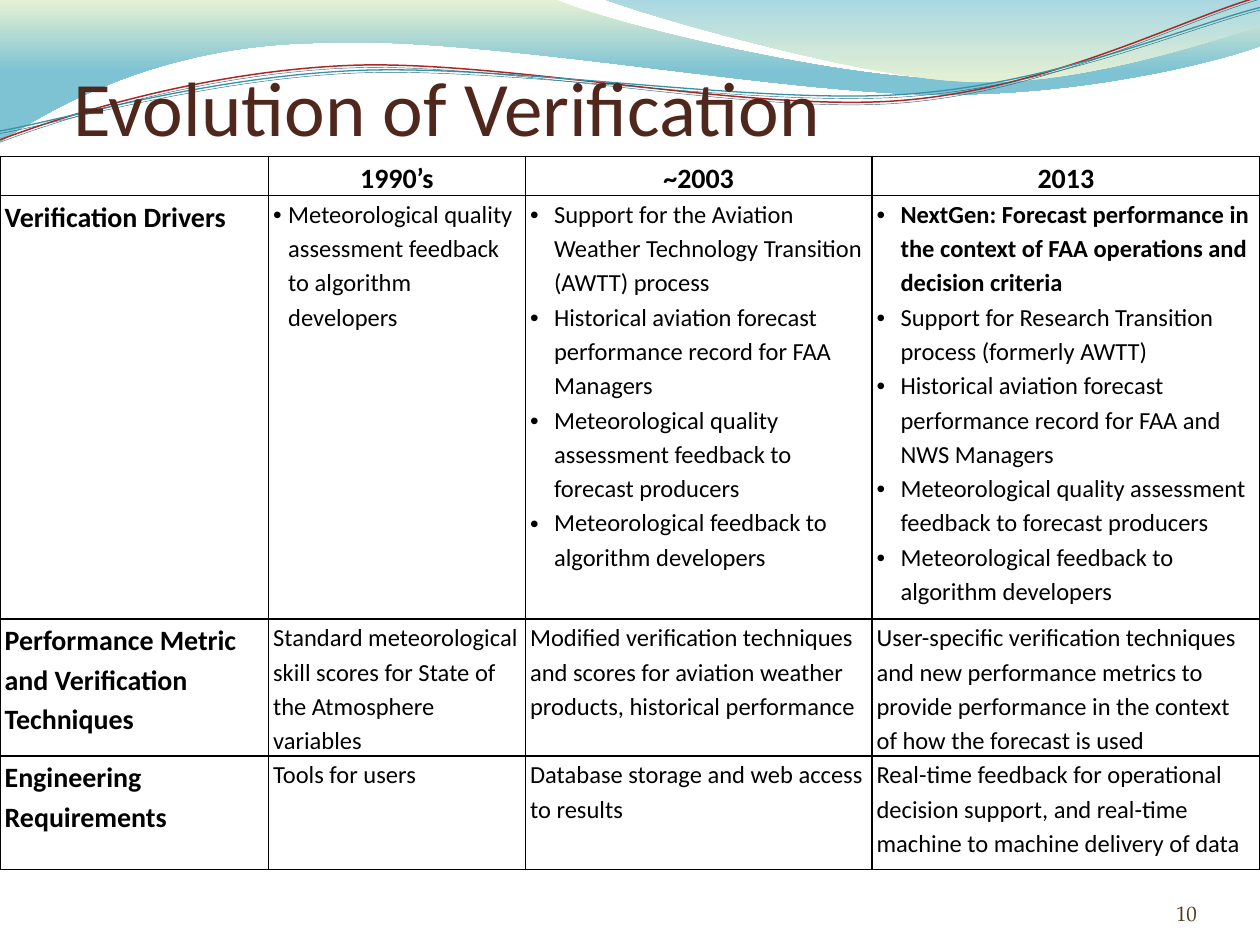
"""Builds a slide with a wave header and a table on the evolution of verification."""
from math import cos, radians, sin
from lxml.etree import SubElement
from pptx import Presentation
from pptx.dml.color import RGBColor
from pptx.enum.text import MSO_ANCHOR, MSO_AUTO_SIZE, PP_ALIGN
from pptx.oxml.ns import qn
from pptx.util import Inches, Pt

COLORS = {
    "black": "000000", "title": "4F271C", "number": "4B3E21",
    "green": "E8F2D3", "teal": "7EC3D4", "sky": "A9D7E2",
    "red": "AC2829", "blue": "3891A7", "deep": "2A6D7D",
}
BODY_FONT = "Calibri"
COLUMNS = [2.13, 2.04, 2.75, 3.08]
ROWS = [0.13, 3.36, 0.9, 0.9]
LINE_TILT = -2.7

BROAD_WAVE = [
    (0, -0.01), (4.4, -0.01), (4.76, 0.17, 6.64, 0.63, 7.58, 0.63),
    (8.53, 0.63, 9.58, 0.26, 10, 0.09), (10.01, 0.36),
    (9.83, 0.44, 8.7, 0.76, 7.46, 0.75), (6.22, 0.75, 3.82, 0.28, 2.57, 0.34),
    (1.29, 0.35, 0.46, 0.83, -0.01, 1.13), (0, -0.01),
]
RIGHT_WAVE = [
    (4.79, -0.01), (5.09, 0.11, 6.82, 0.62, 7.69, 0.65),
    (8.56, 0.69, 9.61, 0.32, 10, 0.21), (10, 0), (4.79, -0.01),
]
STEEP_LINE = [
    (0, 1.11), (0.48, 0.93, 1.58, 0.57, 2.77, 0.52),
    (3.95, 0.47, 5.93, 0.89, 7.13, 0.8), (8.33, 0.71, 9.38, 0.15, 9.98, -0.02),
]
FLAT_LINE = [
    (0, 1.04), (0.47, 0.96, 1.64, 0.61, 2.83, 0.56),
    (4.03, 0.51, 5.97, 0.83, 7.17, 0.75), (8.36, 0.67, 9.41, 0.21, 10, 0.06),
]

CONTENT = [
    ["", "1990’s", "~2003", "2013"],
    [
        "Verification Drivers",
        ["Meteorological quality assessment feedback to algorithm developers"],
        [
            "Support for the Aviation Weather Technology Transition (AWTT) process",
            "Historical aviation forecast performance record for FAA Managers",
            "Meteorological quality assessment feedback to forecast producers",
            "Meteorological feedback to algorithm developers",
        ],
        [
            "NextGen: Forecast performance in the context of FAA operations and decision criteria",
            "Support for Research Transition process (formerly AWTT)",
            "Historical aviation forecast performance record for FAA and NWS Managers",
            "Meteorological quality assessment feedback to forecast producers",
            "Meteorological feedback to algorithm developers",
        ],
    ],
    [
        "Performance Metric and Verification Techniques",
        "Standard meteorological skill scores for State of the Atmosphere variables",
        "Modified verification techniques and scores for aviation weather products, "
        "historical performance",
        "User-specific verification techniques and new performance metrics to provide "
        "performance in the context of how the forecast is used",
    ],
    [
        "Engineering Requirements",
        "Tools for users",
        "Database storage and web access to results",
        "Real-time feedback for operational decision support, and real-time machine to "
        "machine delivery of data",
    ],
]


def color(name):
    """Return the named colour."""
    return RGBColor.from_string(COLORS[name])


def style_font(font, size, name, family=BODY_FONT, bold=False):
    """Set the size, colour, family and weight of a font."""
    font.size, font.name, font.bold = Pt(size), family, bold
    font.color.rgb = color(name)


def level(segments, tilt):
    """Turn segments back by the tilt that their shape will carry."""
    turn = radians(-tilt)
    return [
        tuple(value for x, y in zip(segment[::2], segment[1::2]) for value in (
            5 + (x - 5) * cos(turn) - (y - 0.58) * sin(turn),
            0.58 + (x - 5) * sin(turn) + (y - 0.58) * cos(turn)))
        for segment in segments]


def add_outline(page, segments, closed):
    """Draw an outline of straight and cubic segments."""
    points = [(Inches(x), Inches(y)) for segment in segments
              for x, y in zip(segment[::2], segment[1::2])]
    builder = page.shapes.build_freeform(*points[0])
    builder.add_line_segments(points[1:], close=closed)
    shape = builder.convert_to_shape()
    steps = list(shape._element.iter(qn("a:lnTo")))
    for segment in segments[1:]:
        count = len(segment) // 2
        group, steps = steps[:count], steps[count:]
        if count == 3:
            group[0].tag = qn("a:cubicBezTo")
            for step in group[1:]:
                group[0].append(step[0])
                step.getparent().remove(step)
    shape.shadow.inherit = False
    return shape


def add_wave(page, segments, angle, stops):
    """Add a wave filled with a two-stop gradient."""
    shape = add_outline(page, segments, True)
    shape.line.fill.background()
    shape.fill.gradient()
    shape.fill.gradient_angle = angle
    for stop, (position, name) in zip(shape.fill.gradient_stops, stops):
        stop.position = position
        stop.color.rgb = color(name)


def add_wave_line(page, segments, name, width, shift=0):
    """Add a thin tilted curve, moved down by shift inches."""
    shape = add_outline(page, level(segments, LINE_TILT), False)
    shape.rotation = LINE_TILT
    shape.top += Inches(shift)
    shape.fill.background()
    shape.line.color.rgb = color(name)
    shape.line.width = Pt(width)


def add_title(page, text):
    """Place the title in front of the waves."""
    title = page.shapes.title
    page.shapes._spTree.append(title._element)
    title.left, title.top = Inches(0.58), Inches(0.42)
    title.width, title.height = Inches(9.08), Inches(1.25)
    frame = title.text_frame
    frame.text = text
    frame.auto_size = MSO_AUTO_SIZE.NONE
    frame.vertical_anchor = MSO_ANCHOR.TOP
    frame.margin_left = frame.margin_right = frame.margin_bottom = 0
    frame.margin_top = Inches(0.05)
    frame.paragraphs[0].alignment = PP_ALIGN.LEFT
    style_font(frame.paragraphs[0].runs[0].font, 44, "title")


def add_bullet(para, indent):
    """Give a paragraph a hanging bullet."""
    properties = para._p.get_or_add_pPr()
    properties.set("marL", str(Inches(indent)))
    properties.set("indent", str(-Inches(indent)))
    SubElement(properties, qn("a:buFont"), typeface="Arial")
    SubElement(properties, qn("a:buChar"), char="•")


def add_borders(cell):
    """Draw thin black lines on all sides of a cell."""
    properties = cell._tc.get_or_add_tcPr()
    for position, side in enumerate(("a:lnL", "a:lnR", "a:lnT", "a:lnB")):
        line = SubElement(properties, qn(side), w=str(Pt(1)))
        fill = SubElement(line, qn("a:solidFill"))
        SubElement(fill, qn("a:srgbClr"), val=COLORS["black"])
        properties.insert(position, line)


def fill_cell(cell, content, row, column):
    """Write and format one table cell."""
    cell.margin_left = cell.margin_right = Pt(2.7)
    cell.margin_top = cell.margin_bottom = 0
    cell.fill.background()
    add_borders(cell)
    bulleted = isinstance(content, list)
    cell.text_frame.text = "\n".join(content) if bulleted else content
    heading = row == 0 or column == 0
    for index, para in enumerate(cell.text_frame.paragraphs):
        para.line_spacing = 1.15
        if row == 0:
            para.alignment = PP_ALIGN.CENTER
        if bulleted:
            add_bullet(para, 0.12 if column == 1 else 0.19)
        lead = bulleted and column == 3 and index == 0
        for font in [para.font] + [span.font for span in para.runs]:
            style_font(font, 16 if heading else 14, "black", bold=heading or lead)


def add_comparison(page):
    """Add the table that compares the three periods."""
    table = page.shapes.add_table(
        len(ROWS), len(COLUMNS), 0, Inches(1.24), Inches(10), Inches(5.65)).table
    table.first_row = table.horz_banding = False
    for column, width in zip(table.columns, COLUMNS):
        column.width = Inches(width)
    for row, height in zip(table.rows, ROWS):
        row.height = Inches(height)
    for row, contents in enumerate(CONTENT):
        for column, content in enumerate(contents):
            fill_cell(table.cell(row, column), content, row, column)


def add_page_number(page, text):
    """Add the page number at the lower right."""
    box = page.shapes.add_textbox(Inches(8.67), Inches(6.95), Inches(0.83), Inches(0.4))
    frame = box.text_frame
    frame.text = text
    frame.word_wrap = True
    frame.vertical_anchor = MSO_ANCHOR.BOTTOM
    frame.margin_left = frame.margin_right = frame.margin_top = frame.margin_bottom = 0
    frame.paragraphs[0].alignment = PP_ALIGN.RIGHT
    style_font(frame.paragraphs[0].runs[0].font, 12, "number", "TeX Gyre Pagella")


def main():
    """Build and save the deck."""
    deck = Presentation()
    deck.slide_width, deck.slide_height = Inches(10), Inches(7.5)
    page = deck.slides.add_slide(deck.slide_layouts[5])
    add_wave(page, BROAD_WAVE, 270, [(0, "green"), (0.5, "teal")])
    add_wave(page, RIGHT_WAVE, 90, [(0, "green"), (1, "sky")])
    add_wave_line(page, STEEP_LINE, "red", 0.85)
    add_wave_line(page, FLAT_LINE, "blue", 0.75)
    for segments in (STEEP_LINE, FLAT_LINE):
        add_wave_line(page, segments, "deep", 0.25, shift=0.02)
    add_page_number(page, "10")
    add_title(page, "Evolution of Verification")
    add_comparison(page)
    deck.save("out.pptx")


if __name__ == "__main__":
    main()
